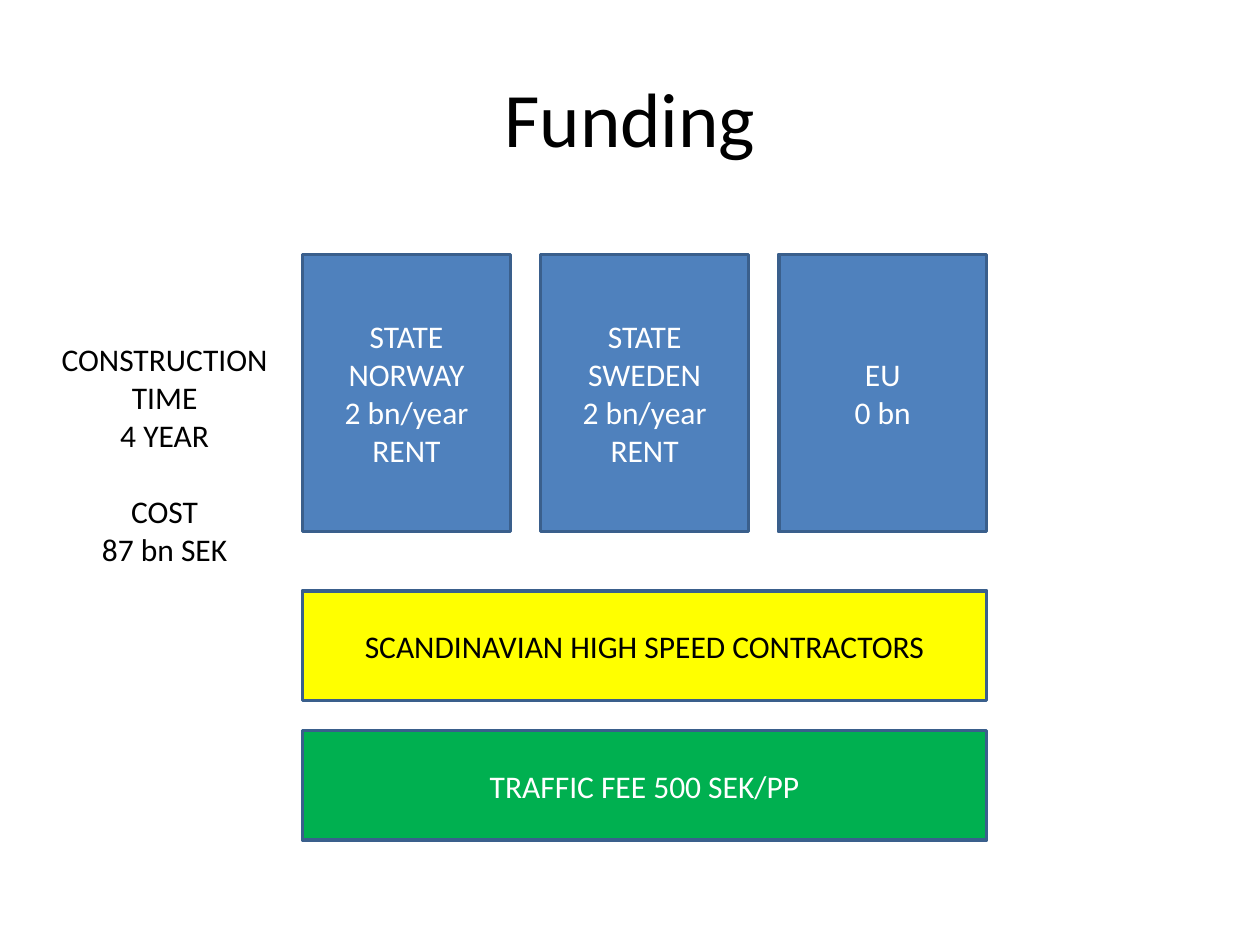
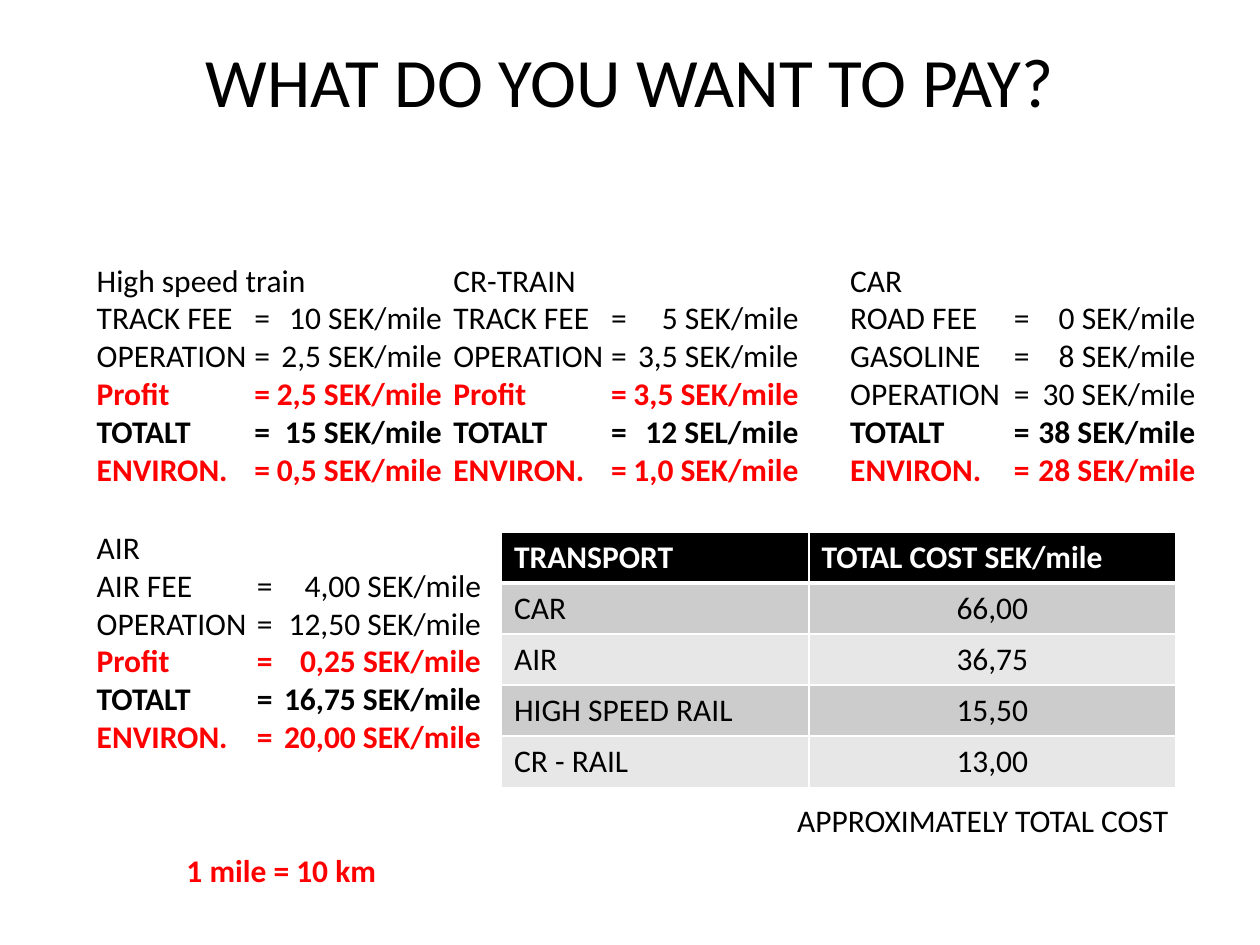
from dataclasses import dataclass
from typing import NamedTuple

from lxml import etree
from pptx import Presentation
from pptx.dml.color import RGBColor
from pptx.enum.shapes import MSO_SHAPE
from pptx.enum.text import MSO_ANCHOR, MSO_AUTO_SIZE, PP_ALIGN
from pptx.oxml.ns import qn
from pptx.util import Cm, Pt

RECTANGLE = MSO_SHAPE.RECTANGLE
LEFT, CENTER = PP_ALIGN.LEFT, PP_ALIGN.CENTER
TOP, MIDDLE = MSO_ANCHOR.TOP, MSO_ANCHOR.MIDDLE
NO_FIT, GROW = MSO_AUTO_SIZE.NONE, MSO_AUTO_SIZE.SHAPE_TO_FIT_TEXT
TITLE_ONLY = 5

# Shared look
BLACK, WHITE, RED = "000000", "FFFFFF", "FF0000"
BLUE, OUTLINE, YELLOW, GREEN = "4F81BD", "3A5F8C", "FFFF00", "00B050"
ROW_FILLS = ("CCCCCC", "E7E7E7")
BODY_FONT = {"name": "Calibri", "size": Pt(18), "bold": False}
BOLD_FONT = BODY_FONT | {"bold": True}


class Area(NamedTuple):
    """Left, top, width and height in centimetres."""
    left: float
    top: float
    width: float
    height: float

    def lengths(self) -> list:
        return [Cm(value) for value in self]


TITLE_AREA = Area(1.27, 0.76, 22.86, 3.18)


@dataclass
class Block:
    lines: list[str]
    area: Area
    fill: str
    color: str = WHITE


@dataclass
class Note:
    lines: list[str]
    area: Area
    color: str = BLACK
    bold: bool = False
    align: PP_ALIGN = LEFT


@dataclass
class PriceList:
    transport: str
    prices: list[tuple[str, str]]
    area: Area
    equals_tab: float
    amount_tab: float = 6.96


def rgb(value: str) -> RGBColor:
    return RGBColor.from_string(value)


def apply(target, values: dict) -> None:
    for name, value in values.items():
        setattr(target, name, value)


def write(paragraph, text: str, font: dict, color: str, align=LEFT) -> None:
    paragraph.alignment = align
    run = paragraph.add_run()
    run.text = text
    apply(run.font, font)
    run.font.color.rgb = rgb(color)


def next_paragraph(frame, index: int):
    return frame.add_paragraph() if index else frame.paragraphs[0]


def write_lines(frame, lines: list[str], font: dict, color: str, align) -> None:
    for index, line in enumerate(lines):
        write(next_paragraph(frame, index), line, font, color, align)


def add_titled_slide(deck, title: str, size: float, frame_format: dict):
    slide = deck.slides.add_slide(deck.slide_layouts[TITLE_ONLY])
    heading = slide.shapes.title
    apply(heading, dict(zip(("left", "top", "width", "height"), TITLE_AREA.lengths())))
    frame = heading.text_frame
    apply(frame, {"auto_size": NO_FIT, "word_wrap": True} | frame_format)
    write(frame.paragraphs[0], title, BODY_FONT | {"size": Pt(size)}, BLACK, CENTER)
    return slide


def add_block(slide, block: Block) -> None:
    shape = slide.shapes.add_shape(RECTANGLE, *block.area.lengths())
    shape.shadow.inherit = False
    shape.fill.solid()
    shape.fill.fore_color.rgb = rgb(block.fill)
    shape.line.color.rgb = rgb(OUTLINE)
    shape.line.width = Pt(2)
    apply(shape.text_frame, {"vertical_anchor": MIDDLE, "word_wrap": True})
    write_lines(shape.text_frame, block.lines, BODY_FONT, block.color, CENTER)


def add_text_frame(slide, area: Area, wrap: bool):
    frame = slide.shapes.add_textbox(*area.lengths()).text_frame
    apply(frame, {"word_wrap": wrap, "auto_size": GROW})
    return frame


def add_note(slide, note: Note):
    frame = add_text_frame(slide, note.area, wrap=False)
    write_lines(frame, note.lines, BODY_FONT | {"bold": note.bold}, note.color, note.align)
    return frame


def set_tabs(paragraph, stops: dict[str, float]) -> None:
    tab_list = etree.SubElement(paragraph._p.get_or_add_pPr(), qn("a:tabLst"))
    for align, position in stops.items():
        etree.SubElement(tab_list, qn("a:tab"), pos=str(Cm(position)), algn=align)


# Price lines that stand out, by label
PRICE_STYLES = {
    "Profit": (BOLD_FONT, RED),
    "TOTALT": (BOLD_FONT, BLACK),
    "ENVIRON.": (BOLD_FONT, RED),
}


def add_price_list(slide, price_list: PriceList) -> None:
    frame = add_text_frame(slide, price_list.area, wrap=True)
    write(frame.paragraphs[0], price_list.transport, BODY_FONT, BLACK)
    for label, amount in price_list.prices:
        paragraph = frame.add_paragraph()
        set_tabs(paragraph, {"l": price_list.equals_tab, "r": price_list.amount_tab})
        font, color = PRICE_STYLES.get(label, (BODY_FONT, BLACK))
        write(paragraph, f"{label}\t=\t{amount}", font, color)


def set_borders(cell, widths: dict[str, float]) -> None:
    properties = cell._tc.get_or_add_tcPr()
    for side, width in widths.items():
        line = etree.SubElement(properties, qn(f"a:ln{side}"), w=str(Pt(width)))
        fill = etree.SubElement(line, qn("a:solidFill"))
        etree.SubElement(fill, qn("a:srgbClr"), val=WHITE)


def add_cost_table(slide, rows: list[tuple[str, str]], area: Area, widths) -> None:
    table = slide.shapes.add_table(len(rows), len(widths), *area.lengths()).table
    for column, width in zip(table.columns, widths):
        column.width = Cm(width)
    for r, row in enumerate(rows):
        table.rows[r].height = Cm(area.height / len(rows))
        header = r == 0
        for c, text in enumerate(row):
            cell = table.cell(r, c)
            set_borders(cell, {"L": 1, "R": 1, "T": 3 if r == 1 else 1, "B": 3 if header else 1})
            cell.fill.solid()
            cell.fill.fore_color.rgb = rgb(BLACK if header else ROW_FILLS[(r - 1) % 2])
            write(cell.text_frame.paragraphs[0], text,
                  BOLD_FONT if header else BODY_FONT,
                  WHITE if header else BLACK,
                  CENTER if c and not header else LEFT)


# Funding: three payers above two full-width bands
PAYERS = [
    ["STATE", "NORWAY", "2 bn/year", "RENT"],
    ["STATE", "SWEDEN", "2 bn/year", "RENT"],
    ["EU", "0 bn"],
]
FIRST_PAYER = Area(6.1, 5.13, 4.19, 5.59)
PAYER_PITCH = 4.8
BAND_WIDTH = PAYER_PITCH * (len(PAYERS) - 1) + FIRST_PAYER.width
BANDS = [
    Block(["SCANDINAVIAN HIGH SPEED CONTRACTORS"],
          Area(FIRST_PAYER.left, 11.91, BAND_WIDTH, 2.21), YELLOW, BLACK),
    Block(["TRAFFIC FEE 500 SEK/PP"],
          Area(FIRST_PAYER.left, 14.73, BAND_WIDTH, 2.21), GREEN),
]
CONSTRUCTION = Note(["CONSTRUCTION", "TIME", "4 YEAR", "COST", "87 bn SEK"],
                    Area(0.97, 6.73, 4.7, 5.64), align=CENTER)


def build_funding(deck) -> None:
    slide = add_titled_slide(deck, "Funding", 44, {"vertical_anchor": MIDDLE})
    for index, lines in enumerate(PAYERS):
        area = FIRST_PAYER._replace(left=FIRST_PAYER.left + index * PAYER_PITCH)
        add_block(slide, Block(lines, area, BLUE))
    for band in BANDS:
        add_block(slide, band)
    construction = add_note(slide, CONSTRUCTION)
    cost_line = construction.paragraphs[CONSTRUCTION.lines.index("COST")]
    cost_line.space_before = Pt(22)


# Prices: one list per means of transport, and the totals
PRICE_LISTS = [
    PriceList("High speed train", [
        ("TRACK FEE", "10 SEK/mile"), ("OPERATION", "2,5 SEK/mile"),
        ("Profit", "2,5 SEK/mile"), ("TOTALT", "15 SEK/mile"),
        ("ENVIRON.", "0,5 SEK/mile"),
    ], Area(1.7, 5.13, 7.59, 4.88), 3.18),
    PriceList("CR-TRAIN", [
        ("TRACK FEE", "5 SEK/mile"), ("OPERATION", "3,5 SEK/mile"),
        ("Profit", "3,5 SEK/mile"), ("TOTALT", "12 SEL/mile"),
        ("ENVIRON.", "1,0 SEK/mile"),
    ], Area(8.89, 5.13, 7.59, 4.88), 3.18),
    PriceList("CAR", [
        ("ROAD FEE", "0 SEK/mile"), ("GASOLINE", "8 SEK/mile"),
        ("OPERATION", "30 SEK/mile"), ("TOTALT", "38 SEK/mile"),
        ("ENVIRON.", "28 SEK/mile"),
    ], Area(16.89, 5.13, 7.52, 4.88), 3.3),
    PriceList("AIR", [
        ("AIR FEE", "4,00 SEK/mile"), ("OPERATION", "12,50 SEK/mile"),
        ("Profit", "0,25 SEK/mile"), ("TOTALT", "16,75 SEK/mile"),
        ("ENVIRON.", "20,00 SEK/mile"),
    ], Area(1.7, 10.52, 8.36, 4.88), 3.23, 7.75),
]
TOTAL_COSTS = [
    ("TRANSPORT", "TOTAL COST SEK/mile"),
    ("CAR", "66,00"),
    ("AIR", "36,75"),
    ("HIGH SPEED RAIL", "15,50"),
    ("CR - RAIL", "13,00"),
]
PRICE_NOTES = [
    Note(["APPROXIMATELY TOTAL COST"], Area(15.82, 16.03, 8.05, 1.02)),
    Note(["1 mile = 10 km"], Area(3.51, 17.04, 4.37, 1.02), RED, True),
]


def build_prices(deck) -> None:
    slide = add_titled_slide(deck, "WHAT DO YOU WANT TO PAY?", 39.6,
                             {"vertical_anchor": TOP, "margin_top": Cm(0)})
    for price_list in PRICE_LISTS:
        add_price_list(slide, price_list)
    add_cost_table(slide, TOTAL_COSTS, Area(10.11, 10.72, 13.59, 5.15), (6.2, 7.39))
    for note in PRICE_NOTES:
        add_note(slide, note)


def main() -> None:
    deck = Presentation()
    deck.slide_width, deck.slide_height = Cm(25.4), Cm(19.05)
    build_funding(deck)
    build_prices(deck)
    deck.save("out.pptx")


if __name__ == "__main__":
    main()
